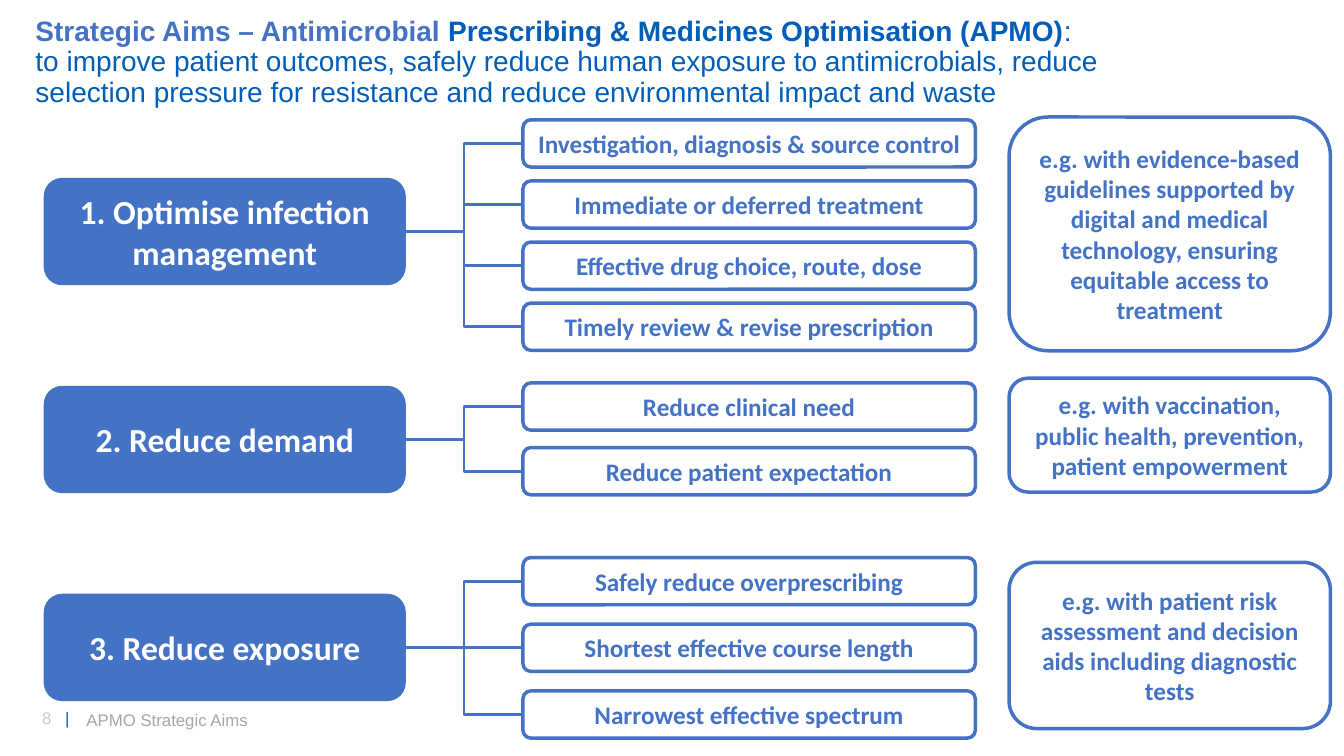
from lxml import etree
from pptx import Presentation
from pptx.dml.color import RGBColor
from pptx.enum.shapes import MSO_CONNECTOR as Connector, MSO_SHAPE as Preset
from pptx.enum.text import MSO_ANCHOR as Anchor, MSO_AUTO_SIZE as AutoSize, PP_ALIGN as Align
from pptx.oxml.ns import qn
from pptx.util import Cm, Pt

BLUE = RGBColor(0x44, 0x72, 0xC4)
DEEP_BLUE = RGBColor(0x00, 0x5E, 0xB8)
WHITE = RGBColor(0xFF, 0xFF, 0xFF)
GREY = RGBColor(0xA6, 0xA6, 0xA6)
PALE_GREY = RGBColor(0xC9, 0xC9, 0xC9)

AIM_LEFT, AIM_TOP, AIM_STEP, AIM_WIDTH, AIM_HEIGHT = 1.12, 4.5, 5.24, 9.09, 2.67
ACTION_LEFT, ACTION_WIDTH, ACTION_HEIGHT = 13.18, 11.4, 1.19
EXAMPLE_LEFT, EXAMPLE_WIDTH = 25.43, 8.1

AIMS = [
    {
        "aim": "1. Optimise infection management",
        "actions": [
            "Investigation, diagnosis & source control",
            "Immediate or deferred treatment",
            "Effective drug choice, route, dose",
            "Timely review & revise prescription",
        ],
        "action_top": 3.02,
        "action_step": 1.54,
        "example": "e.g. with evidence-based guidelines supported by digital and "
                   "medical technology, ensuring equitable access to treatment",
        "example_top": 2.95,
        "example_height": 5.89,
    },
    {
        "aim": "2. Reduce demand",
        "actions": ["Reduce clinical need", "Reduce patient expectation"],
        "action_top": 9.65,
        "action_step": 1.63,
        "example": "e.g. with vaccination, public health, prevention, patient empowerment",
        "example_top": 9.53,
        "example_height": 2.87,
    },
    {
        "aim": "3. Reduce exposure",
        "actions": [
            "Safely reduce overprescribing",
            "Shortest effective course length",
            "Narrowest effective spectrum",
        ],
        "action_top": 14.05,
        "action_step": 1.68,
        "example": "e.g. with patient risk assessment and decision aids including diagnostic tests",
        "example_top": 14.17,
        "example_height": 4.19,
    },
]


class AimsSlide:
    heading = {"name": "Arial", "size": Pt(20), "bold": True}
    footer = {"name": "Arial", "size": Pt(12), "bold": False}
    label = {"name": "Calibri", "size": Pt(18), "bold": True}

    def __init__(self, presentation):
        self.slide = presentation.slides.add_slide(presentation.slide_layouts[5])

    def format_frame(self, frame, anchor):
        values = {"word_wrap": True, "auto_size": AutoSize.NONE, "vertical_anchor": anchor}
        for name, value in values.items():
            setattr(frame, name, value)

    def add_words(self, paragraph, text, color, style):
        for index, line in enumerate(text.split("\n")):
            if index:
                paragraph.add_line_break()
            run = paragraph.add_run()
            run.text = line
            for name, value in style.items():
                setattr(run.font, name, value)
            run.font.color.rgb = color

    def title(self, box, runs):
        shape = self.slide.shapes.title
        for name, value in zip(("left", "top", "width", "height"), box):
            setattr(shape, name, Cm(value))
        self.format_frame(shape.text_frame, Anchor.MIDDLE)
        paragraph = shape.text_frame.paragraphs[0]
        paragraph.alignment = Align.LEFT
        paragraph.line_spacing = 0.9
        for text, color, bold in runs:
            self.add_words(paragraph, text, color, {**self.heading, "bold": bold})

    def text(self, box, runs, anchor, tab=None):
        shape = self.slide.shapes.add_textbox(*map(Cm, box))
        self.format_frame(shape.text_frame, anchor)
        paragraph = shape.text_frame.paragraphs[0]
        if tab:
            tabs = etree.SubElement(paragraph._p.get_or_add_pPr(), qn("a:tabLst"))
            etree.SubElement(tabs, qn("a:tab"), pos=str(Cm(tab)), algn="l")
        for text, color in runs:
            self.add_words(paragraph, text, color, self.footer)

    def panel(self, box, text, filled=False):
        shape = self.slide.shapes.add_shape(Preset.ROUNDED_RECTANGLE, *map(Cm, box))
        shape.shadow.inherit = False
        if filled:
            shape.fill.solid()
            shape.fill.fore_color.rgb = BLUE
        else:
            shape.fill.background()
        shape.line.color.rgb = BLUE
        shape.line.width = Pt(1 if filled else 2.5)
        self.format_frame(shape.text_frame, Anchor.MIDDLE)
        paragraph = shape.text_frame.paragraphs[0]
        paragraph.alignment = Align.CENTER
        style = {**self.label, "size": Pt(24)} if filled else self.label
        self.add_words(paragraph, text, WHITE if filled else BLUE, style)
        return shape

    def branch(self, aim, action):
        connector = self.slide.shapes.add_connector(Connector.ELBOW, 0, 0, 0, 0)
        connector.begin_connect(aim, 3)
        connector.end_connect(action, 1)
        connector.line.color.rgb = BLUE
        connector.line.width = Pt(2)
        etree.SubElement(connector._element.spPr, qn("a:effectLst"))


def main():
    presentation = Presentation()
    presentation.slide_width = Cm(33.87)
    presentation.slide_height = Cm(19.05)
    page = AimsSlide(presentation)

    page.title((0.64, 0.38, 29.57, 2.41), [
        ("Strategic Aims – Antimicrobial ", BLUE, True),
        ("Prescribing & Medicines Optimisation (APMO)", DEEP_BLUE, True),
        (": \nto improve patient outcomes, safely reduce human exposure to antimicrobials, "
         "reduce selection pressure for resistance and reduce environmental impact and waste",
         DEEP_BLUE, False),
    ])
    page.text((0.81, 17.7, 1.8, 0.76), [("8\t", PALE_GREY), ("|", DEEP_BLUE)], Anchor.TOP, tab=0.58)
    page.text((1.93, 17.6, 7.95, 1.07), [("APMO Strategic Aims", GREY)], Anchor.MIDDLE)

    for row, group in enumerate(AIMS):
        aim_box = (AIM_LEFT, AIM_TOP + row * AIM_STEP, AIM_WIDTH, AIM_HEIGHT)
        aim = page.panel(aim_box, group["aim"], filled=True)
        for index, text in enumerate(group["actions"]):
            top = group["action_top"] + index * group["action_step"]
            action = page.panel((ACTION_LEFT, top, ACTION_WIDTH, ACTION_HEIGHT), text)
            page.branch(aim, action)
        example_box = (EXAMPLE_LEFT, group["example_top"], EXAMPLE_WIDTH, group["example_height"])
        page.panel(example_box, group["example"])

    presentation.save("out.pptx")


if __name__ == "__main__":
    main()
